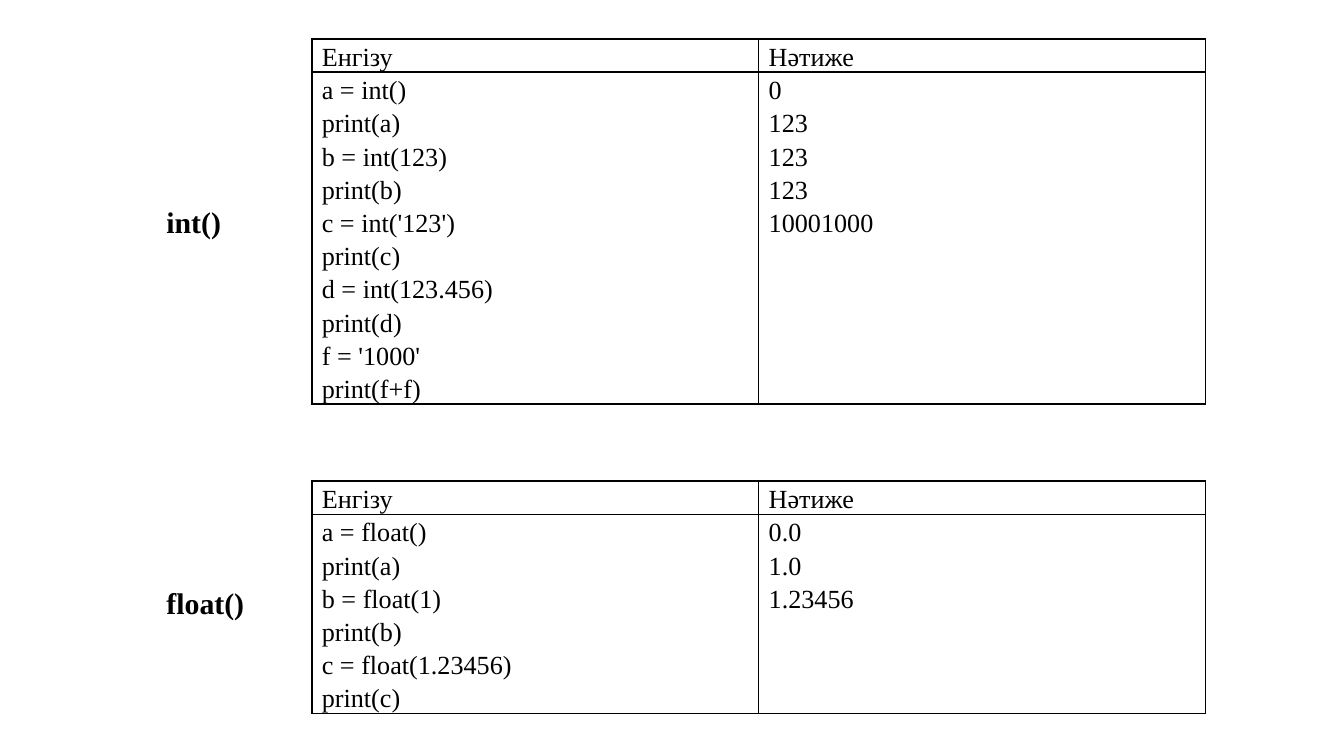
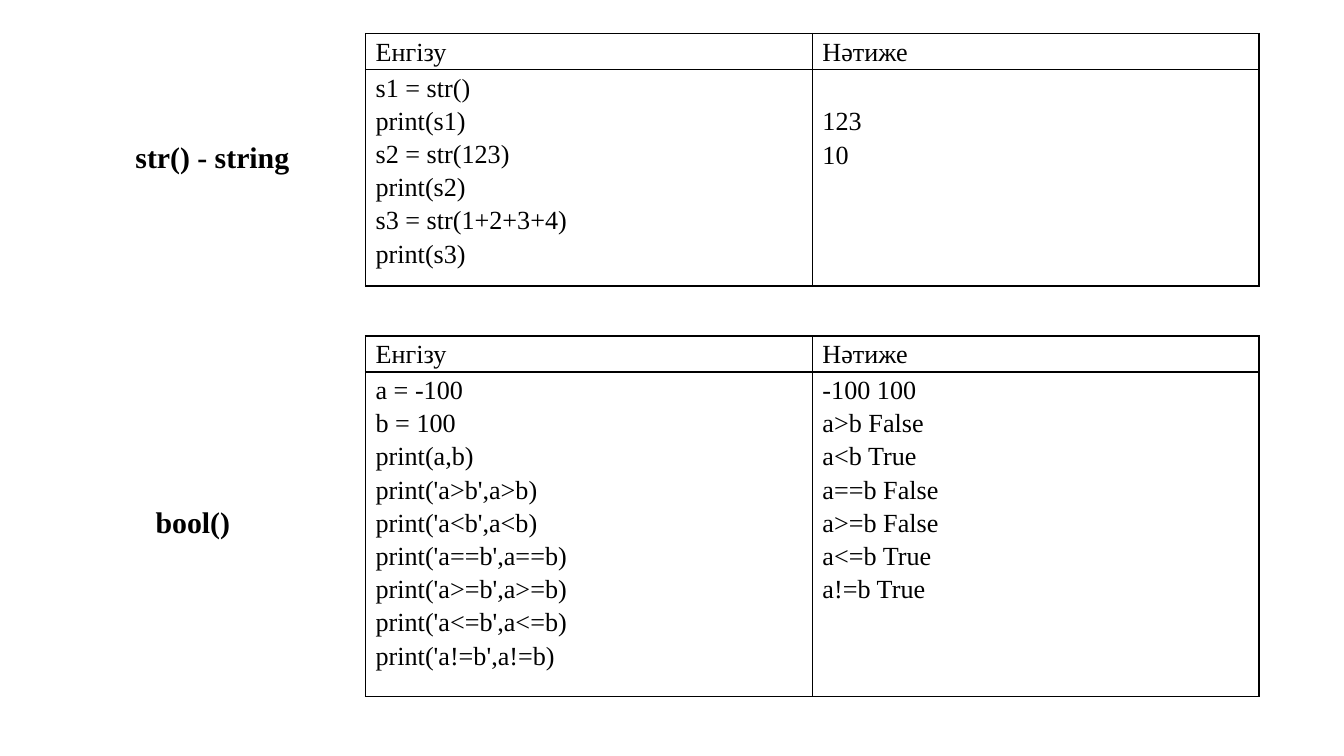
from dataclasses import dataclass

from lxml import etree
from pptx import Presentation
from pptx.dml.color import RGBColor
from pptx.enum import text
from pptx.oxml import ns
from pptx.util import Inches, Pt


@dataclass(frozen=True)
class Theme:
    font: str = "Times New Roman"
    ink: str = "000000"
    code_size: int = 14
    label_size: int = 16
    border: int = 1
    spacing: float = 1.15
    line_height: float = 0.25
    inset: float = 5.4
    label_height: float = 0.37
    table_width: float = 6.65


THEME = Theme()
HEADINGS = ("Енгізу", "Нәтиже")


@dataclass(frozen=True)
class Example:
    """One type conversion: its label box, table box, code and output."""
    label: str
    label_at: tuple
    label_width: float
    table_at: tuple
    table_height: float
    code: tuple
    output: tuple
    silent_lines: int = 0


SLIDES = (
    (
        Example("int()", (1.14, 1.47), 0.67, (2.32, 0.29), 2.95,
                ("a = int()", "print(a)", "b = int(123)", "print(b)",
                 "c = int('123')", "print(c)", "d = int(123.456)", "print(d)",
                 "f = '1000'", "print(f+f)"),
                ("0", "123", "123", "123", "10001000")),
        Example("float()", (1.14, 4.3), 0.85, (2.32, 3.58), 1.88,
                ("a = float()", "print(a)", "b = float(1)", "print(b)",
                 "c = float(1.23456)", "print(c)"),
                ("0.0", "1.0", "1.23456")),
    ),
    (
        Example("str() - string", (0.91, 0.98), 1.37, (2.72, 0.25), 1.88,
                ("s1 = str()", "print(s1)", "s2 = str(123)", "print(s2)",
                 "s3 = str(1+2+3+4)", "print(s3)"),
                ("123", "10"), silent_lines=1),
        Example("bool()", (1.06, 3.7), 0.76, (2.72, 2.5), 2.68,
                ("a = -100", "b = 100", "print(a,b)",
                 *(f"print('a{sign}b',a{sign}b)"
                   for sign in (">", "<", "==", ">=", "<=", "!="))),
                ("-100 100", "a>b False", "a<b True", "a==b False",
                 "a>=b False", "a<=b True", "a!=b True")),
    ),
)


def style_runs(frame, size, bold=False):
    for paragraph in frame.paragraphs:
        for run in paragraph.runs:
            run.font.name = THEME.font
            run.font.size = Pt(size)
            run.font.bold = bold
            run.font.color.rgb = RGBColor.from_string(THEME.ink)


def border_cell(cell):
    properties = cell._tc.get_or_add_tcPr()
    for side in ("lnL", "lnR", "lnT", "lnB"):
        line = etree.SubElement(properties, ns.qn(f"a:{side}"), w=str(Pt(THEME.border)))
        fill = etree.SubElement(line, ns.qn("a:solidFill"))
        etree.SubElement(fill, ns.qn("a:srgbClr"), val=THEME.ink)


def fill_cell(cell, lines, silent_lines=0):
    """Write one paragraph per line, below room for lines that print nothing."""
    border_cell(cell)
    cell.fill.background()
    cell.margin_left = cell.margin_right = Pt(THEME.inset)
    cell.margin_top = Inches(silent_lines * THEME.line_height)
    cell.margin_bottom = 0
    cell.text_frame.text = "\n".join(lines)
    for paragraph in cell.text_frame.paragraphs:
        paragraph.line_spacing = THEME.spacing
    style_runs(cell.text_frame, THEME.code_size)


def add_label(slide, example):
    left, top = example.label_at
    label = slide.shapes.add_textbox(Inches(left), Inches(top),
                                     Inches(example.label_width),
                                     Inches(THEME.label_height))
    frame = label.text_frame
    frame.text = example.label
    frame.word_wrap = False
    frame.auto_size = text.MSO_AUTO_SIZE.SHAPE_TO_FIT_TEXT
    style_runs(frame, THEME.label_size, bold=True)


def add_code_table(slide, example):
    """Place the table; its rows start at zero height and grow to their text."""
    left, top = example.table_at
    holder = slide.shapes.add_table(2, len(HEADINGS), Inches(left), Inches(top),
                                    Inches(THEME.table_width),
                                    Inches(example.table_height))
    table = holder.table
    table.first_row = table.horz_banding = False
    for row in table.rows:
        row.height = 0
    holder.height = Inches(example.table_height)
    for column, heading in enumerate(HEADINGS):
        fill_cell(table.cell(0, column), [heading])
    fill_cell(table.cell(1, 0), example.code)
    fill_cell(table.cell(1, 1), example.output, example.silent_lines)


def add_examples_slide(deck, examples):
    slide = deck.slides.add_slide(deck.slide_layouts[6])
    for example in examples:
        add_code_table(slide, example)
    for example in examples:
        add_label(slide, example)


def main():
    deck = Presentation()
    deck.slide_width = Inches(10)
    deck.slide_height = deck.slide_width * 9 // 16
    for examples in SLIDES:
        add_examples_slide(deck, examples)
    deck.save("out.pptx")


if __name__ == "__main__":
    main()
